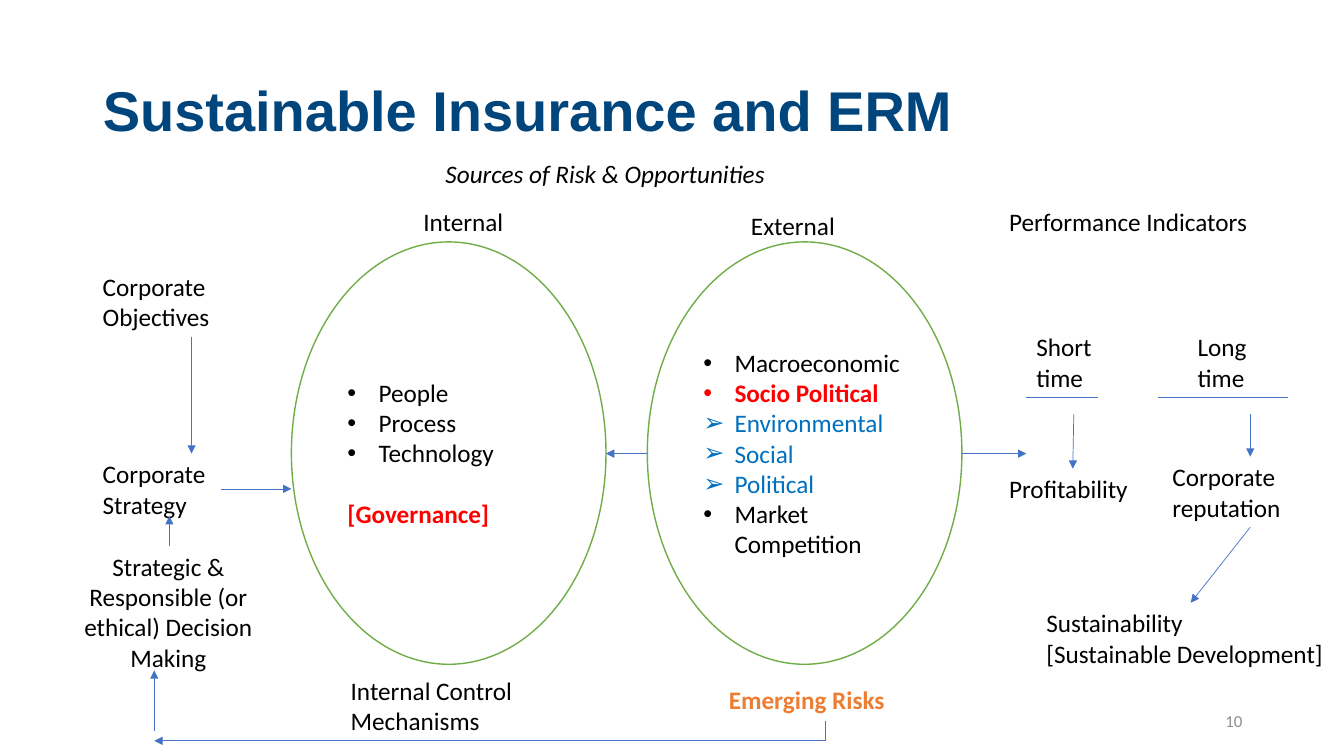
from pptx import Presentation
from pptx.dml.color import RGBColor
from pptx.enum.shapes import MSO_CONNECTOR, MSO_SHAPE
from pptx.enum.text import MSO_ANCHOR, PP_ALIGN
from pptx.oxml.ns import qn
from pptx.util import Inches, Pt
from lxml import etree

STRAIGHT, ELBOW = MSO_CONNECTOR.STRAIGHT, MSO_CONNECTOR.ELBOW
OVAL = MSO_SHAPE.OVAL
TOP, MIDDLE = MSO_ANCHOR.TOP, MSO_ANCHOR.MIDDLE
LEFT, CENTER, RIGHT = PP_ALIGN.LEFT, PP_ALIGN.CENTER, PP_ALIGN.RIGHT

BLACK, WHITE, RED, BLUE = "000000", "FFFFFF", "FF0000", "0070C0"
NAVY, ORANGE, GREEN, GRAY, ARROW_BLUE = "00457C", "ED7D31", "70AD47", "8C8C8C", "4472C4"
DOT, ARROWHEAD = "•", "➢"
INDENT = Inches(0.31)
BLANK_LINE = 22

TITLE = "Sustainable Insurance and ERM"

# left, top, width, height, lines, text style
LABELS = [
    (4.32, 1.52, 3.86, 0.4, ["Sources of Risk & Opportunities"], {"italic": True}),
    (4.1, 2, 1.22, 0.4, ["Internal"], {}),
    (7.35, 2.04, 1.22, 0.4, ["External"], {}),
    (9.91, 2, 2.7, 0.4, ["Performance Indicators"], {}),
    (0.92, 2.64, 1.97, 0.71, ["Corporate Objectives"], {}),
    (0.92, 4.5, 1.97, 0.71, ["Corporate Strategy"], {}),
    (0.46, 5.42, 2.42, 1.31,
     ["Strategic & Responsible (or ethical) Decision Making"], {"align": CENTER}),
    (3.38, 6.65, 2.13, 0.71, ["Internal Control Mechanisms"], {}),
    (7.13, 6.74, 2.11, 0.41, ["Emerging Risks"], {"color": ORANGE, "bold": True}),
    (10.18, 3.24, 1.08, 0.71, ["Short time"], {}),
    (11.78, 3.24, 1.08, 0.71, ["Long time"], {}),
    (9.91, 4.65, 1.45, 0.4, ["Profitability"], {}),
    (11.53, 4.53, 1.74, 0.71, ["Corporate reputation"], {}),
    (10.28, 5.98, 3.05, 0.71, ["Sustainability", "[Sustainable Development]"], {}),
]
PAGE_NUMBER = (9.42, 6.95, 3, 0.4, ["10"],
               {"size": 12, "color": GRAY, "align": RIGHT, "anchor": MIDDLE})

# left edge, then (text, style) for each line
RISK_SOURCES = [
    (2.89, [
        ("People", {"bullet": DOT}),
        ("Process", {"bullet": DOT}),
        ("Technology", {"bullet": DOT}),
        ("[Governance]", {"color": RED, "bold": True, "before": BLANK_LINE}),
    ]),
    (6.42, [
        ("Macroeconomic", {"bullet": DOT}),
        ("Socio Political", {"bullet": DOT, "color": RED, "bold": True}),
        ("Environmental", {"bullet": ARROWHEAD, "color": BLUE}),
        ("Social", {"bullet": ARROWHEAD, "color": BLUE}),
        ("Political", {"bullet": ARROWHEAD, "color": BLUE}),
        ("Market Competition", {"bullet": DOT}),
    ]),
]
OVAL_TOP, OVAL_WIDTH, OVAL_HEIGHT = 2.4, 3.12, 4.19

ARROWS = [
    (1.9, 3.34, 1.9, 4.5),
    (2.19, 4.85, 2.89, 4.85),
    (1.68, 5.42, 1.68, 5.12),
    (1.53, 7.25, 1.53, 6.65),
    (6.42, 4.5, 6.01, 4.5),
    (9.54, 4.5, 10.18, 4.5),
    (10.65, 4.11, 10.64, 4.65),
    (12.4, 4.11, 12.4, 4.53),
    (12.4, 5.23, 11.81, 5.98),
]
UNDERLINES = [(10.18, 3.94, 10.89, 3.94), (11.49, 3.94, 12.77, 3.94)]
FEEDBACK = (8.19, 7.15, 1.53, 7.35)


def rgb(value):
    return RGBColor.from_string(value)


def add_text(para, text, size=18, color=BLACK, bold=False, italic=False,
             font="Calibri", align=LEFT, bullet=None, before=0):
    para.alignment = align
    para.space_before = Pt(before)
    if bullet:
        props = para._p.get_or_add_pPr()
        props.set("marL", str(INDENT))
        props.set("indent", str(-INDENT))
        etree.SubElement(props, qn("a:buFont")).set("typeface", "Arial")
        etree.SubElement(props, qn("a:buChar")).set("char", bullet)
    span = para.add_run()
    span.text = text
    span.font.name, span.font.size = font, Pt(size)
    span.font.bold, span.font.italic = bold, italic
    span.font.color.rgb = rgb(color)


def fill_frame(frame, lines, anchor=TOP):
    """Write (text, style) lines into a text frame."""
    frame.word_wrap = True
    frame.vertical_anchor = anchor
    for index, (text, style) in enumerate(lines):
        para = frame.add_paragraph() if index else frame.paragraphs[0]
        add_text(para, text, **style)


def add_label(slide, left, top, width, height, lines, style):
    box = slide.shapes.add_textbox(Inches(left), Inches(top), Inches(width), Inches(height))
    run_style = {key: value for key, value in style.items() if key != "anchor"}
    fill_frame(box.text_frame, [(line, run_style) for line in lines],
               style.get("anchor", TOP))


def add_risk_oval(slide, left, lines):
    oval = slide.shapes.add_shape(OVAL, Inches(left), Inches(OVAL_TOP),
                                  Inches(OVAL_WIDTH), Inches(OVAL_HEIGHT))
    oval.shadow.inherit = False
    oval.fill.solid()
    oval.fill.fore_color.rgb = rgb(WHITE)
    oval.line.color.rgb = rgb(GREEN)
    oval.line.width = Pt(1)
    fill_frame(oval.text_frame, lines, MIDDLE)


def add_line(slide, ends, arrow=True, kind=STRAIGHT):
    line = slide.shapes.add_connector(kind, *[Inches(value) for value in ends])
    line.line.color.rgb = rgb(ARROW_BLUE)
    line.line.width = Pt(0.5)
    if arrow:
        etree.SubElement(line.line._get_or_add_ln(), qn("a:tailEnd")).set("type", "triangle")
    etree.SubElement(line._element.spPr, qn("a:effectLst"))
    return line


def add_corner_arrow(slide, x1, y1, x2, y2):
    """Go down from the start, then left to the end: one bend, turned by 90 degrees."""
    middle_x, middle_y = (x1 + x2) / 2, (y1 + y2) / 2
    half_width, half_height = (y2 - y1) / 2, (x1 - x2) / 2
    line = add_line(slide, (middle_x - half_width, middle_y - half_height,
                            middle_x + half_width, middle_y + half_height), kind=ELBOW)
    props = line._element.spPr
    props.find(qn("a:xfrm")).set("rot", str(90 * 60000))
    props.find(qn("a:prstGeom")).set("prst", "bentConnector2")


def main():
    deck = Presentation()
    deck.slide_width, deck.slide_height = Inches(13.33), Inches(7.5)
    slide = deck.slides.add_slide(deck.slide_layouts[5])

    title = slide.shapes.title
    title.left, title.top = Inches(0.92), Inches(0.4)
    title.width, title.height = Inches(11.5), Inches(1.45)
    fill_frame(title.text_frame,
               [(TITLE, {"size": 40, "color": NAVY, "bold": True, "font": "Arial"})], MIDDLE)
    title.text_frame.paragraphs[0].line_spacing = 0.9

    for left, lines in RISK_SOURCES:
        add_risk_oval(slide, left, lines)
    for label in LABELS + [PAGE_NUMBER]:
        add_label(slide, *label)
    for ends in ARROWS:
        add_line(slide, ends)
    for ends in UNDERLINES:
        add_line(slide, ends, arrow=False)
    add_corner_arrow(slide, *FEEDBACK)

    deck.save("out.pptx")


if __name__ == "__main__":
    main()
